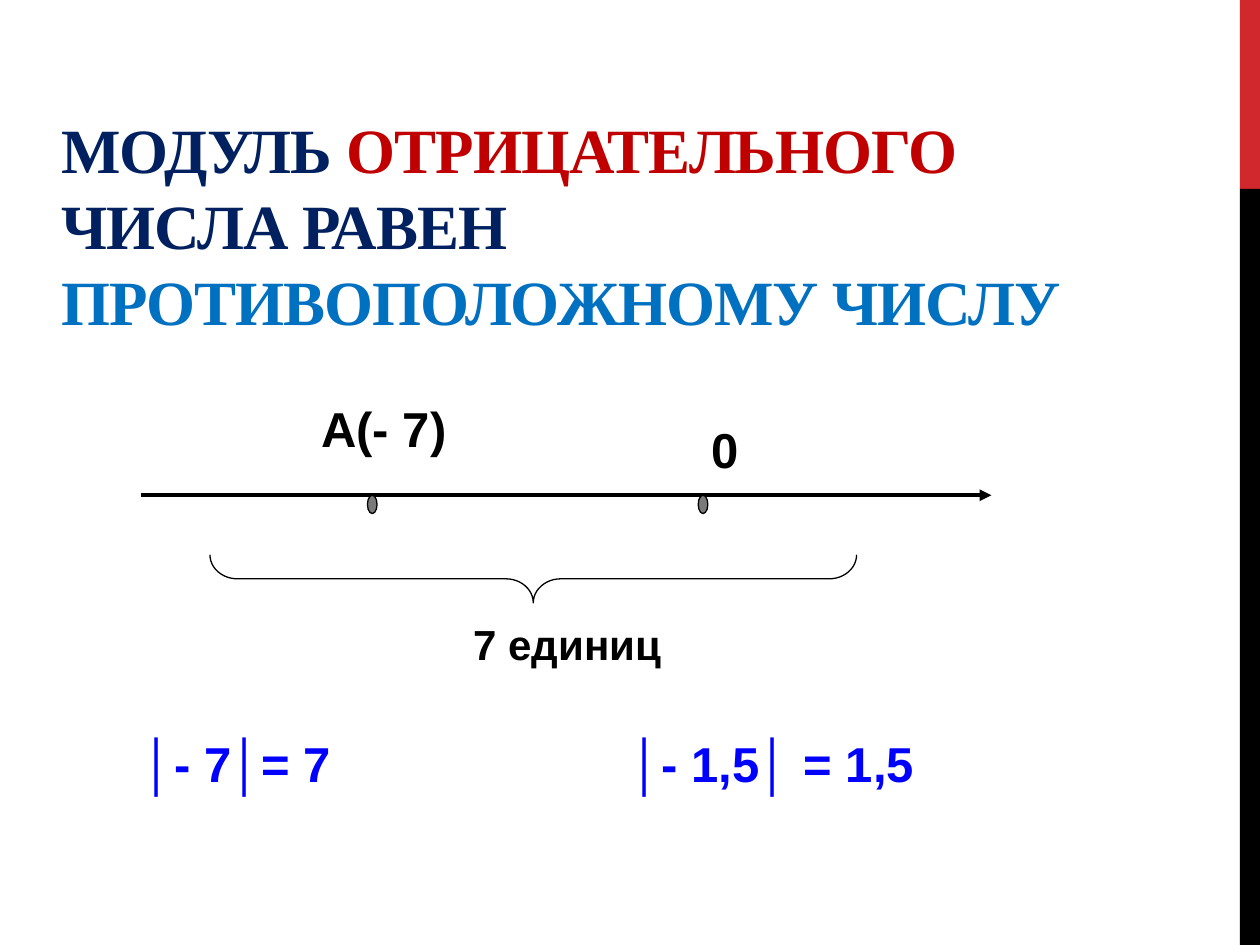
from dataclasses import dataclass

from lxml import etree
from pptx import Presentation
from pptx.dml.color import RGBColor
from pptx.enum.shapes import MSO_CONNECTOR, MSO_SHAPE
from pptx.enum.text import MSO_ANCHOR
from pptx.oxml.ns import qn
from pptx.util import Pt

RECTANGLE = MSO_SHAPE.RECTANGLE
OVAL = MSO_SHAPE.OVAL
LEFT_BRACE = MSO_SHAPE.LEFT_BRACE
STRAIGHT = MSO_CONNECTOR.STRAIGHT
TOP = MSO_ANCHOR.TOP
BOTTOM = MSO_ANCHOR.BOTTOM


@dataclass(frozen=True)
class Theme:
    black: str = "000000"
    red: str = "D1282E"
    navy: str = "002060"
    crimson: str = "C00000"
    sky: str = "0070C0"
    blue: str = "0000FF"
    grey: str = "7A7A7A"
    title_font: str = "Times New Roman"
    body_font: str = "Arial"
    title_size: float = 36
    label_size: float = 28
    caption_size: float = 24
    thin: float = 0.75
    thick: float = 2.25


THEME = Theme()


@dataclass(frozen=True)
class Box:
    left: float
    top: float
    width: float
    height: float

    def lengths(self) -> tuple:
        return Pt(self.left), Pt(self.top), Pt(self.width), Pt(self.height)


@dataclass(frozen=True)
class Span:
    text: str
    color: str
    bold: bool = True


@dataclass(frozen=True)
class Label:
    box: Box
    spans: tuple[Span, ...]
    size: float = THEME.label_size
    font: str = THEME.body_font
    anchor: MSO_ANCHOR = TOP
    wrap: bool = False
    spacing: int = 0


AXIS_Y = 283
AXIS_START, AXIS_END = 80.5, 566.5
POINT_LEFTS = (210, 399)
BARS = (
    (Box(708.5, 0, 11.5, 108), THEME.red),
    (Box(708.5, 108, 11.5, 432), THEME.black),
)
LABELS = (
    Label(
        Box(28, 21, 638, 175.5),
        (
            Span("МОДУЛЬ ", THEME.navy),
            Span("ОТРИЦАТЕЛЬНОГО", THEME.crimson),
            Span(" ЧИСЛА РАВЕН ", THEME.navy),
            Span("ПРОТИВОПОЛОЖНОМУ ЧИСЛУ", THEME.sky),
        ),
        THEME.title_size, THEME.title_font, BOTTOM, True, -60,
    ),
    Label(Box(399.5, 236, 33, 41), (Span("0", THEME.black),)),
    Label(Box(176.5, 224, 87, 41), (Span("А(- 7)", THEME.black),)),
    Label(Box(263.5, 350, 123, 36), (Span("7 единиц", THEME.black),), THEME.caption_size),
    Label(Box(75, 415.5, 130, 41), (Span("│", THEME.blue, False), Span("- 7│= 7", THEME.blue))),
    Label(Box(353.5, 415.5, 190, 41), (Span("│- 1,5│ = 1,5", THEME.blue),)),
)


def add_figure(page, kind: MSO_SHAPE, box: Box, fill: str | None, line: str | None):
    figure = page.shapes.add_shape(kind, *box.lengths())
    figure.shadow.inherit = False
    if fill:
        figure.fill.solid()
        figure.fill.fore_color.rgb = RGBColor.from_string(fill)
    else:
        figure.fill.background()
    if line:
        figure.line.color.rgb = RGBColor.from_string(line)
        figure.line.width = Pt(THEME.thin)
    else:
        figure.line.fill.background()
    return figure


def add_brace(page, left: float, top: float, width: float, height: float) -> None:
    center_x, center_y = left + width / 2, top + height / 2
    upright = Box(center_x - height / 2, center_y - width / 2, height, width)
    brace = add_figure(page, LEFT_BRACE, upright, None, THEME.black)
    brace.rotation = 270
    brace.adjustments[0] = 0.57


def add_axis(page) -> None:
    axis = page.shapes.add_connector(
        STRAIGHT, Pt(AXIS_START), Pt(AXIS_Y), Pt(AXIS_END), Pt(AXIS_Y)
    )
    axis.line.color.rgb = RGBColor.from_string(THEME.black)
    axis.line.width = Pt(THEME.thick)
    etree.SubElement(axis.line._get_or_add_ln(), qn("a:tailEnd"), type="triangle")
    etree.SubElement(axis._element.spPr, qn("a:effectLst"))


def add_label(page, label: Label) -> None:
    frame = page.shapes.add_textbox(*label.box.lengths()).text_frame
    frame.word_wrap = label.wrap
    frame.vertical_anchor = label.anchor
    para = frame.paragraphs[0]
    for span in label.spans:
        run = para.add_run()
        run.text = span.text
        run.font.name = label.font
        run.font.size = Pt(label.size)
        run.font.bold = span.bold
        run.font.color.rgb = RGBColor.from_string(span.color)
        if label.spacing:
            run.font._element.set("spc", str(label.spacing))


def main() -> None:
    """Build the slide on the modulus of a negative number."""
    deck = Presentation()
    deck.slide_width, deck.slide_height = Pt(720), Pt(540)
    page = deck.slides.add_slide(deck.slide_layouts[6])
    for box, color in BARS:
        add_figure(page, RECTANGLE, box, color, None)
    add_axis(page)
    for left in POINT_LEFTS:
        add_figure(page, OVAL, Box(left, AXIS_Y, 5.5, 10.5), THEME.grey, THEME.black)
    add_brace(page, 120, 317, 369.5, 27.5)
    for label in LABELS:
        add_label(page, label)
    deck.save("out.pptx")


if __name__ == "__main__":
    main()
